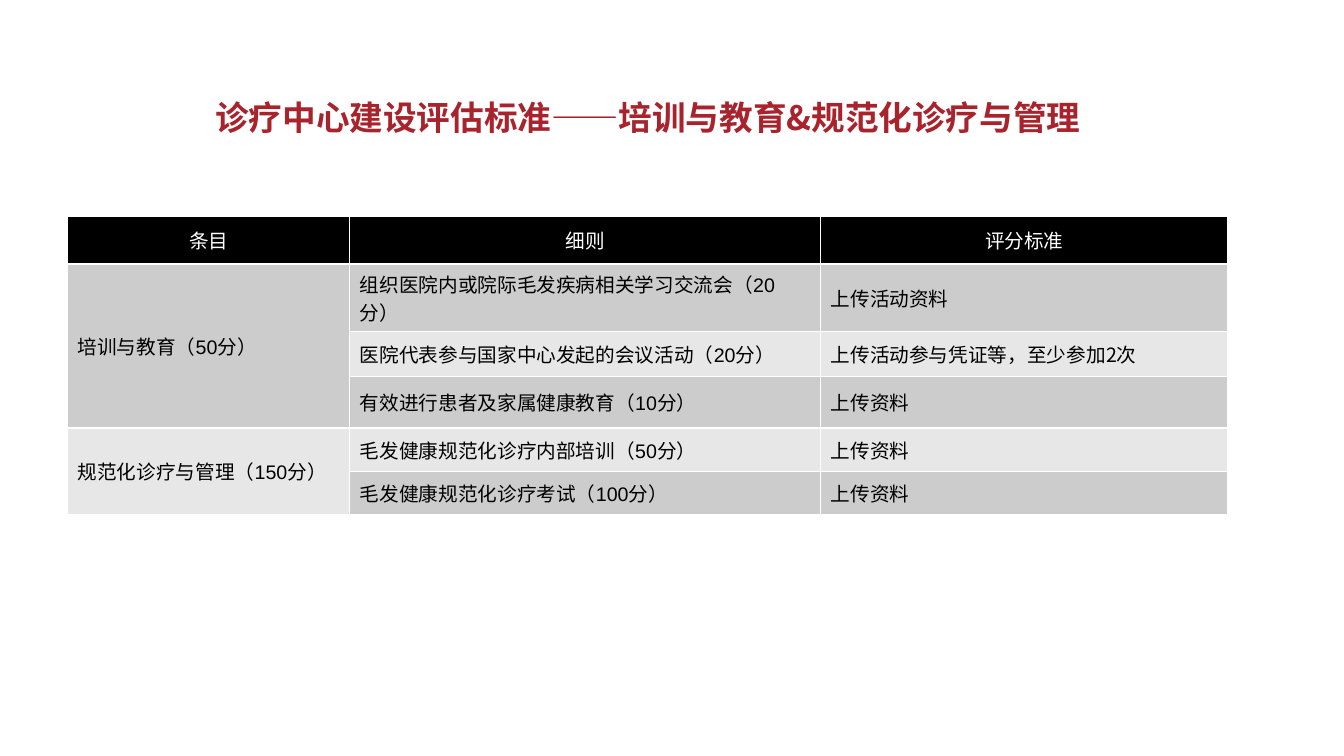
from dataclasses import dataclass

from lxml.etree import SubElement
from pptx import Presentation
from pptx.dml.color import RGBColor
from pptx.enum.text import MSO_ANCHOR, PP_ALIGN
from pptx.oxml.ns import qn
from pptx.util import Inches, Pt


@dataclass(frozen=True)
class Theme:
    title: str = "A9232D"
    header: str = "000000"
    header_text: str = "FFFFFF"
    body_text: str = "000000"
    bands: tuple = ("CCCCCC", "E7E7E7")
    border: str = "FFFFFF"
    latin: str = "Arial"
    chinese: str = "Noto Sans CJK SC"
    title_size: int = 24
    table_size: int = 14


THEME = Theme()
TITLE = "诊疗中心建设评估标准——培训与教育&规范化诊疗与管理"
TITLE_BOX = (1.62, 0.91, 9.61, 0.55)
TABLE_BOX = (0.67, 2.15, 11.5, 2.92)
COLUMNS = (2.8, 4.67, 4.04)
ROWS = (0.47, 0.63, 0.45, 0.51, 0.43, 0.43)
HEADINGS = ("条目", "细则", "评分标准")
CRITERIA = {
    "培训与教育（50分）": (
        ("组织医院内或院际毛发疾病相关学习交流会（20分）", "上传活动资料"),
        ("医院代表参与国家中心发起的会议活动（20分）", "上传活动参与凭证等，至少参加2次"),
        ("有效进行患者及家属健康教育（10分）", "上传资料"),
    ),
    "规范化诊疗与管理（150分）": (
        ("毛发健康规范化诊疗内部培训（50分）", "上传资料"),
        ("毛发健康规范化诊疗考试（100分）", "上传资料"),
    ),
}


def write(frame, text, size, color, font, bold=False, align=PP_ALIGN.LEFT):
    para = frame.paragraphs[0]
    para.alignment = align
    span = para.add_run()
    span.text = text
    values = {"size": Pt(size), "name": font, "bold": bold}
    for name, value in values.items():
        setattr(span.font, name, value)
    span.font.color.rgb = RGBColor.from_string(color)
    east_asian = SubElement(span.font._element, qn("a:ea"))
    east_asian.set("typeface", THEME.chinese)


def draw_border(cell):
    properties = cell._tc.get_or_add_tcPr()
    for position, side in enumerate(("lnL", "lnR", "lnT", "lnB")):
        line = SubElement(properties, qn(f"a:{side}"), w=str(Pt(1)))
        properties.insert(position, line)
        fill = SubElement(line, qn("a:solidFill"))
        SubElement(fill, qn("a:srgbClr"), val=THEME.border)


def style_cell(cell, fill):
    cell.fill.solid()
    cell.fill.fore_color.rgb = RGBColor.from_string(fill)
    cell.vertical_anchor = MSO_ANCHOR.MIDDLE
    draw_border(cell)


def add_title(page, box):
    title = page.shapes.title
    for name, value in zip(("left", "top", "width", "height"), box):
        setattr(title, name, Inches(value))
    frame = title.text_frame
    for side in ("left", "top", "right", "bottom"):
        setattr(frame, f"margin_{side}", Inches(0.04))
    frame.word_wrap = True
    frame.vertical_anchor = MSO_ANCHOR.MIDDLE
    write(frame, TITLE, THEME.title_size, THEME.title, THEME.chinese,
          bold=True, align=PP_ALIGN.CENTER)
    frame.paragraphs[0].line_spacing = 0.9


def add_criteria_table(page, box):
    table = page.shapes.add_table(len(ROWS), len(COLUMNS), *map(Inches, box)).table
    for column, width in zip(table.columns, COLUMNS):
        column.width = Inches(width)
    for row, height in zip(table.rows, ROWS):
        row.height = Inches(height)
    for row in range(len(ROWS)):
        fill = THEME.bands[(row - 1) % 2] if row else THEME.header
        for column in range(len(COLUMNS)):
            style_cell(table.cell(row, column), fill)

    fonts = (THEME.latin, THEME.latin, THEME.chinese)
    for column, heading in enumerate(HEADINGS):
        write(table.cell(0, column).text_frame, heading, THEME.table_size,
              THEME.header_text, fonts[column], align=PP_ALIGN.CENTER)

    def write_body(row, column, text):
        write(table.cell(row, column).text_frame, text, THEME.table_size,
              THEME.body_text, fonts[column])

    row = 1
    for item, details in CRITERIA.items():
        table.cell(row, 0).merge(table.cell(row + len(details) - 1, 0))
        write_body(row, 0, item)
        for rule, evidence in details:
            write_body(row, 1, rule)
            write_body(row, 2, evidence)
            row += 1


def main():
    deck = Presentation()
    deck.slide_width, deck.slide_height = Inches(13.33), Inches(7.5)
    page = deck.slides.add_slide(deck.slide_layouts[5])
    add_title(page, TITLE_BOX)
    add_criteria_table(page, TABLE_BOX)
    deck.save("out.pptx")


if __name__ == "__main__":
    main()
